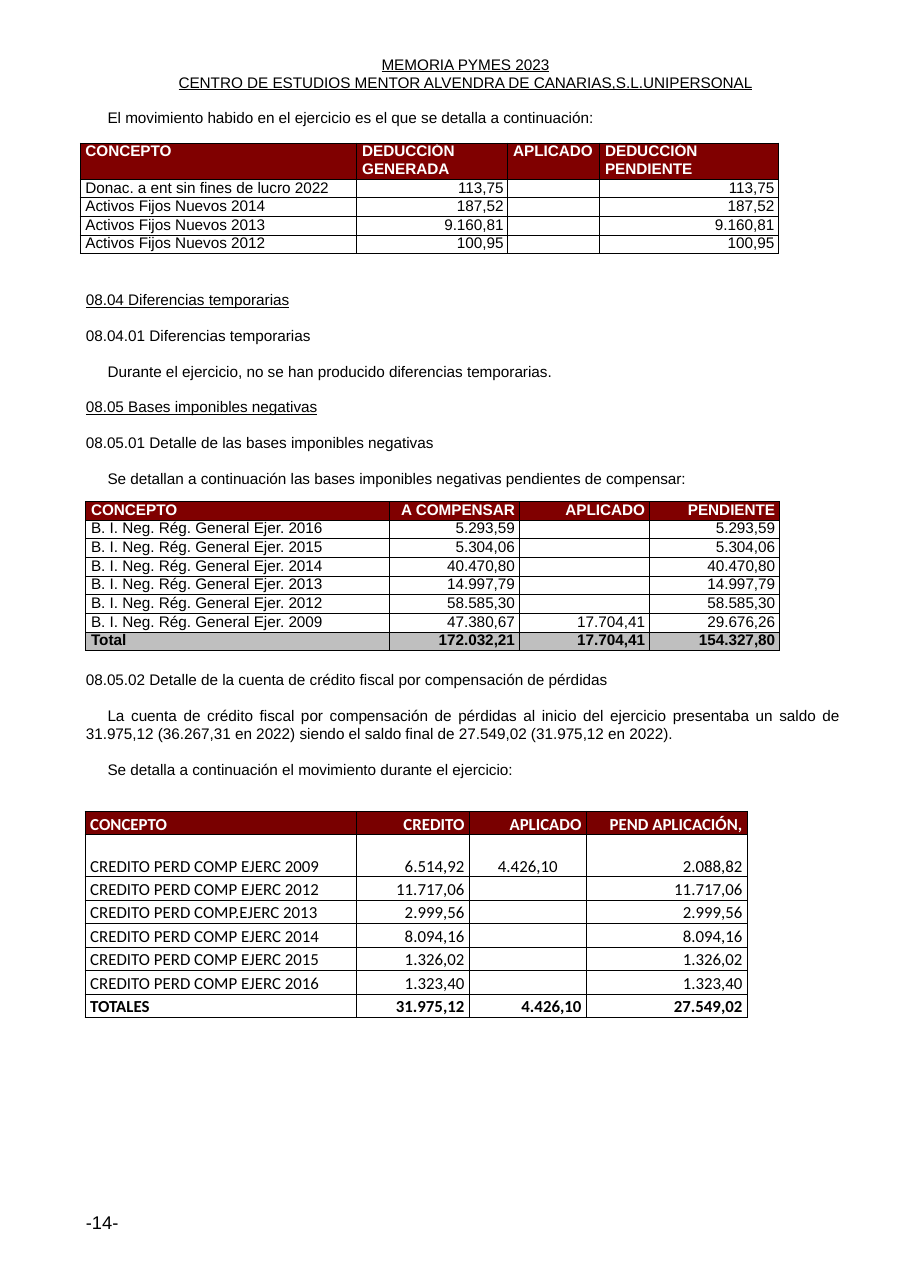
import pptx
import pptx.dml.color
import pptx.enum.text
import pptx.util
import lxml.etree
from dataclasses import dataclass

Cm, Pt = pptx.util.Cm, pptx.util.Pt
ALIGN, ANCHOR = pptx.enum.text.PP_ALIGN, pptx.enum.text.MSO_ANCHOR
LEFT, RIGHT, CENTER, JUSTIFY = ALIGN.LEFT, ALIGN.RIGHT, ALIGN.CENTER, ALIGN.JUSTIFY


@dataclass(frozen=True)
class Theme:
    font: str = "Arial"
    credit_font: str = "Calibri"
    body: float = 10
    credit: float = 11
    page: float = 12
    ink: str = "000000"
    white: str = "FFFFFF"
    maroon: str = "800000"
    credit_maroon: str = "790000"
    grey: str = "BFBFBF"


THEME = Theme()

# Content: headings and text
HEADER = ["MEMORIA PYMES 2023", "CENTRO DE ESTUDIOS MENTOR ALVENDRA DE CANARIAS,S.L.UNIPERSONAL"]
PAGE_NUMBER = "-14-"

# Each block: top in cm, then (text, style) lines
BLOCKS = [
    (2.49, [("El movimiento habido en el ejercicio es el que se detalla a continuación:", "indented")]),
    (6.69, [
        ("08.04 Diferencias temporarias", "section"),
        ("08.04.01 Diferencias temporarias", "plain"),
        ("Durante el ejercicio, no se han producido diferencias temporarias.", "indented"),
        ("08.05 Bases imponibles negativas", "section"),
        ("08.05.01 Detalle de las bases imponibles negativas", "plain"),
        ("Se detallan a continuación las bases imponibles negativas pendientes de compensar:", "indented"),
    ]),
    (15.45, [
        ("08.05.02 Detalle de la cuenta de crédito fiscal por compensación de pérdidas", "plain"),
        ("La cuenta de crédito fiscal por compensación de pérdidas al inicio del ejercicio presentaba "
         "un saldo de 31.975,12 (36.267,31 en 2022) siendo el saldo final de 27.549,02 "
         "(31.975,12 en 2022).", "justified"),
        ("Se detalla a continuación el movimiento durante el ejercicio:", "indented"),
    ]),
]

# Content: tables
DEDUCTIONS = [
    ("CONCEPTO", "DEDUCCIÓN GENERADA", "APLICADO", "DEDUCCIÓN PENDIENTE"),
    ("Donac. a ent sin fines de lucro 2022", "113,75", "", "113,75"),
    ("Activos Fijos Nuevos 2014", "187,52", "", "187,52"),
    ("Activos Fijos Nuevos 2013", "9.160,81", "", "9.160,81"),
    ("Activos Fijos Nuevos 2012", "100,95", "", "100,95"),
]
TAX_BASES = [
    ("CONCEPTO", "A COMPENSAR", "APLICADO", "PENDIENTE"),
    ("B. I. Neg. Rég. General Ejer. 2016", "5.293,59", "", "5.293,59"),
    ("B. I. Neg. Rég. General Ejer. 2015", "5.304,06", "", "5.304,06"),
    ("B. I. Neg. Rég. General Ejer. 2014", "40.470,80", "", "40.470,80"),
    ("B. I. Neg. Rég. General Ejer. 2013", "14.997,79", "", "14.997,79"),
    ("B. I. Neg. Rég. General Ejer. 2012", "58.585,30", "", "58.585,30"),
    ("B. I. Neg. Rég. General Ejer. 2009", "47.380,67", "17.704,41", "29.676,26"),
    ("Total", "172.032,21", "17.704,41", "154.327,80"),
]
CREDITS = [
    ("CONCEPTO", "CREDITO", "APLICADO", "PEND APLICACIÓN,"),
    ("CREDITO PERD COMP EJERC 2009", "6.514,92", "4.426,10", "2.088,82"),
    ("CREDITO PERD COMP EJERC 2012", "11.717,06", "", "11.717,06"),
    ("CREDITO PERD COMP.EJERC 2013", "2.999,56", "", "2.999,56"),
    ("CREDITO PERD COMP EJERC 2014", "8.094,16", "", "8.094,16"),
    ("CREDITO PERD COMP EJERC 2015", "1.326,02", "", "1.326,02"),
    ("CREDITO PERD COMP EJERC 2016", "1.323,40", "", "1.323,40"),
    ("TOTALES", "31.975,12", "4.426,10", "27.549,02"),
]

# Layout in cm
BODY_LEFT, BODY_WIDTH, INDENT = 1.98, 17.36, 0.5
ROW, CREDIT_ROW, FIRST_CREDIT_ROW = 0.43, 0.54, 0.97


def rgb(value):
    return pptx.dml.color.RGBColor.from_string(value)


def set_font(p, size, name=THEME.font, color=THEME.ink, bold=False, underline=False):
    f = p.font
    f.size, f.name, f.bold, f.underline = Pt(size), name, bold, underline
    f.color.rgb = rgb(color)


def prepare_frame(tf):
    tf.word_wrap = True
    tf.auto_size = pptx.enum.text.MSO_AUTO_SIZE.NONE
    tf.vertical_anchor = ANCHOR.TOP
    tf.margin_left = tf.margin_right = tf.margin_top = tf.margin_bottom = 0
    return tf


def add_frame(slide, left, top, width, height):
    return prepare_frame(slide.shapes.add_textbox(Cm(left), Cm(top), Cm(width), Cm(height)).text_frame)


def add_block(slide, top, lines):
    tf = add_frame(slide, BODY_LEFT, top, BODY_WIDTH, 0.85 * len(lines))
    for i, (text, style) in enumerate(lines):
        p = tf.add_paragraph() if i else tf.paragraphs[0]
        p.text = text
        p.space_before = Pt(11.4 if i else 0)
        p.alignment = JUSTIFY if style == "justified" else LEFT
        if style in ("indented", "justified"):
            p._p.get_or_add_pPr().set("indent", str(Cm(INDENT)))
        set_font(p, THEME.body, underline=style == "section")


def add_borders(cell, width):
    tc_pr = cell._tc.get_or_add_tcPr()
    ns = "{http://schemas.openxmlformats.org/drawingml/2006/main}"
    for side in ("lnL", "lnR", "lnT", "lnB"):
        ln = lxml.etree.SubElement(tc_pr, ns + side, w=str(Pt(width)))
        fill = lxml.etree.SubElement(ln, ns + "solidFill")
        lxml.etree.SubElement(fill, ns + "srgbClr", val=THEME.ink)


def add_table(slide, rows, left, top, widths, heights, head_fill, head_align=RIGHT, total=False,
              total_fill=None, font=THEME.font, size=THEME.body, spacing=11.2, border=0.75,
              anchor=ANCHOR.TOP, centered=()):
    table = slide.shapes.add_table(len(rows), len(widths), Cm(left), Cm(top),
                                   Cm(sum(widths)), Cm(sum(heights))).table
    table.first_row = table.horz_banding = False
    for column, width in zip(table.columns, widths):
        column.width = Cm(width)
    for r, (row, height) in enumerate(zip(rows, heights)):
        table.rows[r].height = Cm(height)
        is_head, is_total = r == 0, total and r == len(rows) - 1
        fill = head_fill if is_head else total_fill if is_total else None
        for c, text in enumerate(row):
            cell = table.cell(r, c)
            cell.margin_left, cell.margin_right = Cm(0.12), Cm(0.1)
            cell.margin_top = cell.margin_bottom = 0
            cell.vertical_anchor = anchor
            add_borders(cell, border)
            if fill:
                cell.fill.solid()
                cell.fill.fore_color.rgb = rgb(fill)
            else:
                cell.fill.background()
            p = cell.text_frame.paragraphs[0]
            p.text = text
            p.line_spacing = Pt(spacing)
            p.alignment = (LEFT if c == 0 else head_align if is_head
                           else CENTER if (r, c) in centered else RIGHT)
            set_font(p, size, font, THEME.white if is_head else THEME.ink, is_head or is_total)
            if not text:  # keeps an empty cell as low as its row
                p._p.get_or_add_endParaRPr().set("sz", str(int(size * 100)))


def main():
    prs = pptx.Presentation()
    prs.slide_width, prs.slide_height = Cm(20.98), Cm(29.69)
    slide = prs.slides.add_slide(prs.slide_layouts[5])

    # Document header
    title = slide.shapes.title
    title.left, title.top, title.width, title.height = Cm(3.23), Cm(1.27), Cm(15), Cm(0.85)
    tf = prepare_frame(title.text_frame)
    tf.text = "\n".join(HEADER)
    for p in tf.paragraphs:
        p.alignment, p.line_spacing = CENTER, Pt(11.8)
        set_font(p, THEME.body, underline=True)

    # Sections
    for top, lines in BLOCKS:
        add_block(slide, top, lines)

    # Tables
    add_table(slide, DEDUCTIONS, 1.85, 3.3, (6.38, 3.48, 2.12, 4.12), [0.83] + [ROW] * 4,
              THEME.maroon, head_align=LEFT)
    add_table(slide, TAX_BASES, 1.98, 11.56, (6.99, 3, 3, 3), [ROW] * 8,
              THEME.maroon, total=True, total_fill=THEME.grey)
    add_table(slide, CREDITS, 1.96, 18.7, (6.25, 2.6, 2.7, 3.71),
              [CREDIT_ROW, FIRST_CREDIT_ROW] + [CREDIT_ROW] * 6, THEME.credit_maroon, total=True,
              font=THEME.credit_font, size=THEME.credit, spacing=13.4, border=0.5,
              anchor=ANCHOR.BOTTOM, centered={(1, 2)})

    # Page number
    p = add_frame(slide, BODY_LEFT, 27.92, 1, 0.53).paragraphs[0]
    p.text = PAGE_NUMBER
    set_font(p, THEME.page)

    prs.save("out.pptx")


if __name__ == "__main__":
    main()
